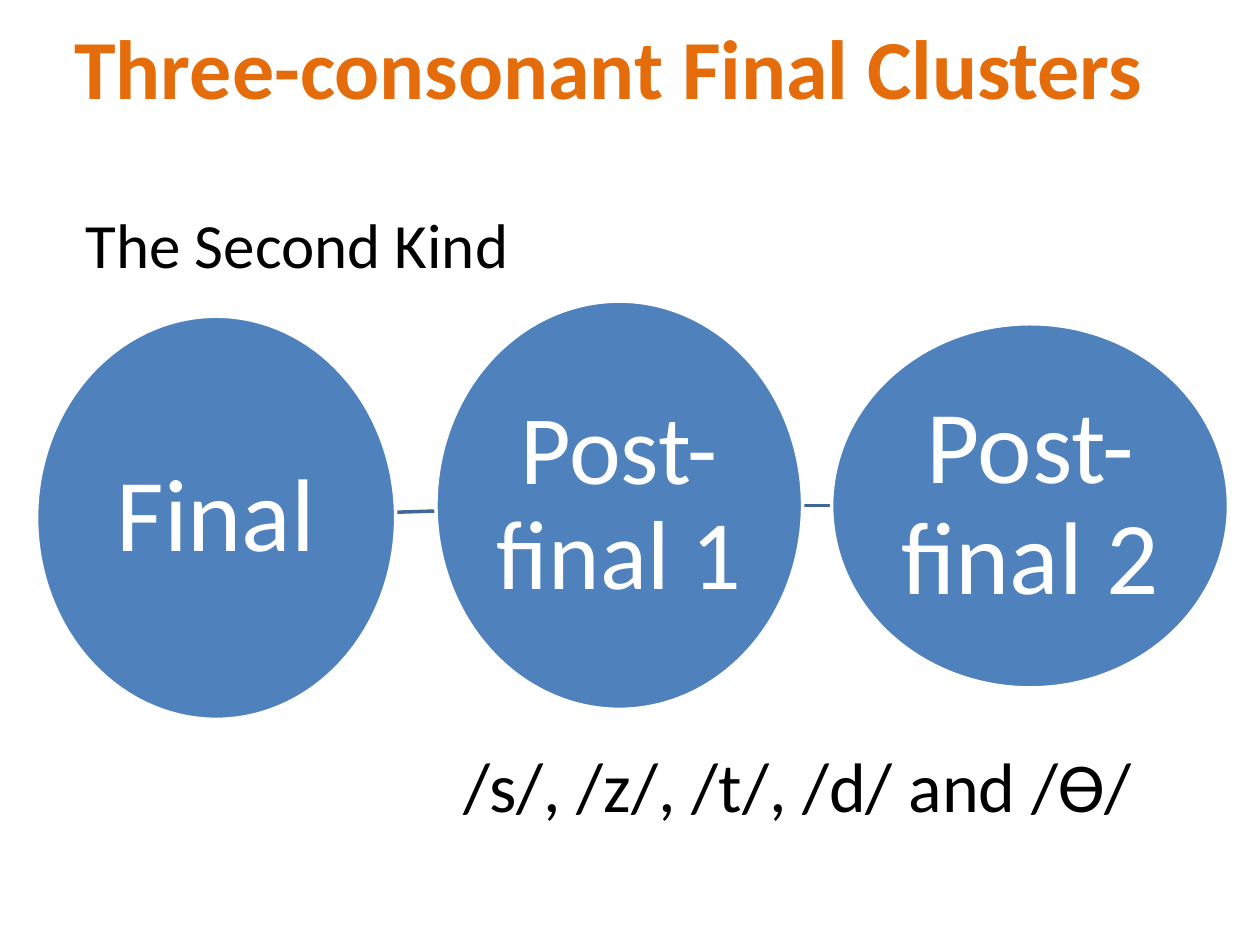
import pptx
import pptx.dml.color
import pptx.enum.shapes
import pptx.enum.text
import pptx.oxml.ns
import pptx.util
from lxml import etree

Pt = pptx.util.Pt
RGBColor = pptx.dml.color.RGBColor
PP_ALIGN = pptx.enum.text.PP_ALIGN
MIDDLE = pptx.enum.text.MSO_ANCHOR.MIDDLE

ORANGE = RGBColor(0xE4, 0x6C, 0x0A)
BLUE = RGBColor(0x4F, 0x81, 0xBD)
LINK_BLUE = RGBColor(0x3F, 0x67, 0x97)
WHITE = RGBColor(0xFF, 0xFF, 0xFF)
BLACK = RGBColor(0x00, 0x00, 0x00)

TITLE_BOX = (0, 21.6, 707.8, 90)
KIND_BOX = (41.8, 113.8, 257.8, 51)
SOUNDS_BOX = (257.8, 420.5, 414, 55.4)
CHAIN_ORIGIN = (20.9, 172.1)
# Label, text size, and box relative to the chain's origin
CHAIN = [
    ("Final", 59, (0, 8.6, 205.2, 230.4)),
    ("Post- final 1", 56, (228.2, 0, 209.5, 233.3)),
    ("Post-final 2", 59, (454.3, 12.9, 226.8, 208.1)),
]


def apply_format(target, values):
    for attribute, value in values.items():
        setattr(target, attribute, value)


def write_text(frame, wording, size, color, align, bold=False):
    frame.word_wrap = True
    frame.text = wording
    paragraph = frame.paragraphs[0]
    paragraph.alignment = align
    apply_format(paragraph.font, {"name": "Calibri", "size": Pt(size), "bold": bold})
    paragraph.font.color.rgb = color
    return paragraph


def place_title(slide, box):
    """Centre the heading in the upper part of its box."""
    title = slide.shapes.title
    apply_format(title, dict(zip(("left", "top", "width", "height"), map(Pt, box))))
    frame = title.text_frame
    write_text(frame, "Three-consonant Final Clusters", 48, ORANGE, PP_ALIGN.CENTER, True)
    apply_format(frame, {
        "auto_size": pptx.enum.text.MSO_AUTO_SIZE.NONE,
        "vertical_anchor": MIDDLE,
        "margin_top": 0,
        "margin_bottom": Pt(58),
        "margin_right": Pt(19),
    })


def add_caption(slide, box, wording, size):
    caption = slide.shapes.add_textbox(*map(Pt, box))
    write_text(caption.text_frame, wording, size, BLACK, PP_ALIGN.LEFT)


def add_position(slide, box, label, size):
    """Add one consonant position as a labelled ellipse."""
    position = slide.shapes.add_shape(
        pptx.enum.shapes.MSO_SHAPE.OVAL, *map(Pt, box))
    position.shadow.inherit = False
    position.fill.solid()
    position.fill.fore_color.rgb = BLUE
    position.line.color.rgb = WHITE
    position.line.width = Pt(2)
    frame = position.text_frame
    paragraph = write_text(frame, label, size, WHITE, PP_ALIGN.CENTER)
    paragraph.line_spacing = 0.9
    sides = ("left", "top", "right", "bottom")
    apply_format(frame, {f"margin_{side}": Pt(3) for side in sides})
    frame.vertical_anchor = MIDDLE


def add_link(slide, before, after):
    """Join two neighbouring boxes along the line between their centres."""
    (x1, y1), (x2, y2) = [(x + w / 2, y + h / 2) for x, y, w, h in (before, after)]
    slope = (y2 - y1) / (x2 - x1)
    start, end = before[0] + before[2], after[0]
    link = slide.shapes.add_connector(
        pptx.enum.shapes.MSO_CONNECTOR.STRAIGHT,
        Pt(start), Pt(y1 + slope * (start - x1)),
        Pt(end), Pt(y1 + slope * (end - x1)))
    link.line.color.rgb = LINK_BLUE
    link.line.width = Pt(2)
    etree.SubElement(link._element.spPr, pptx.oxml.ns.qn("a:effectLst"))


def add_chain(slide, origin):
    left, top = origin
    boxes = [(left + x, top + y, w, h) for _, _, (x, y, w, h) in CHAIN]
    for before, after in zip(boxes, boxes[1:]):
        add_link(slide, before, after)
    for (label, size, _), box in zip(CHAIN, boxes):
        add_position(slide, box, label, size)


def main():
    deck = pptx.Presentation()
    apply_format(deck, {"slide_width": Pt(720), "slide_height": Pt(540)})
    slide = deck.slides.add_slide(deck.slide_layouts.get_by_name("Title Only"))
    place_title(slide, TITLE_BOX)
    add_chain(slide, CHAIN_ORIGIN)
    add_caption(slide, KIND_BOX, "The Second Kind", 36)
    add_caption(slide, SOUNDS_BOX, "/s/, /z/, /t/, /d/ and /Ɵ/", 40)
    deck.save("out.pptx")


if __name__ == "__main__":
    main()
